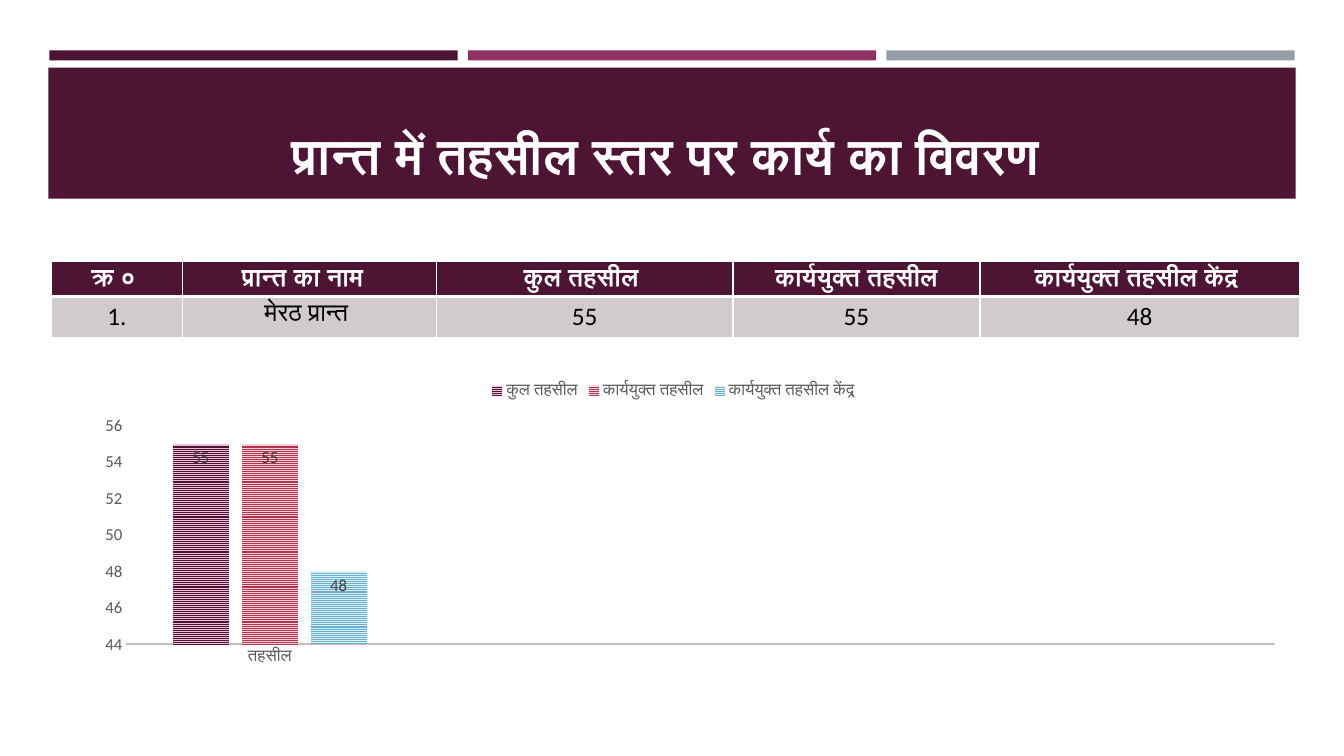
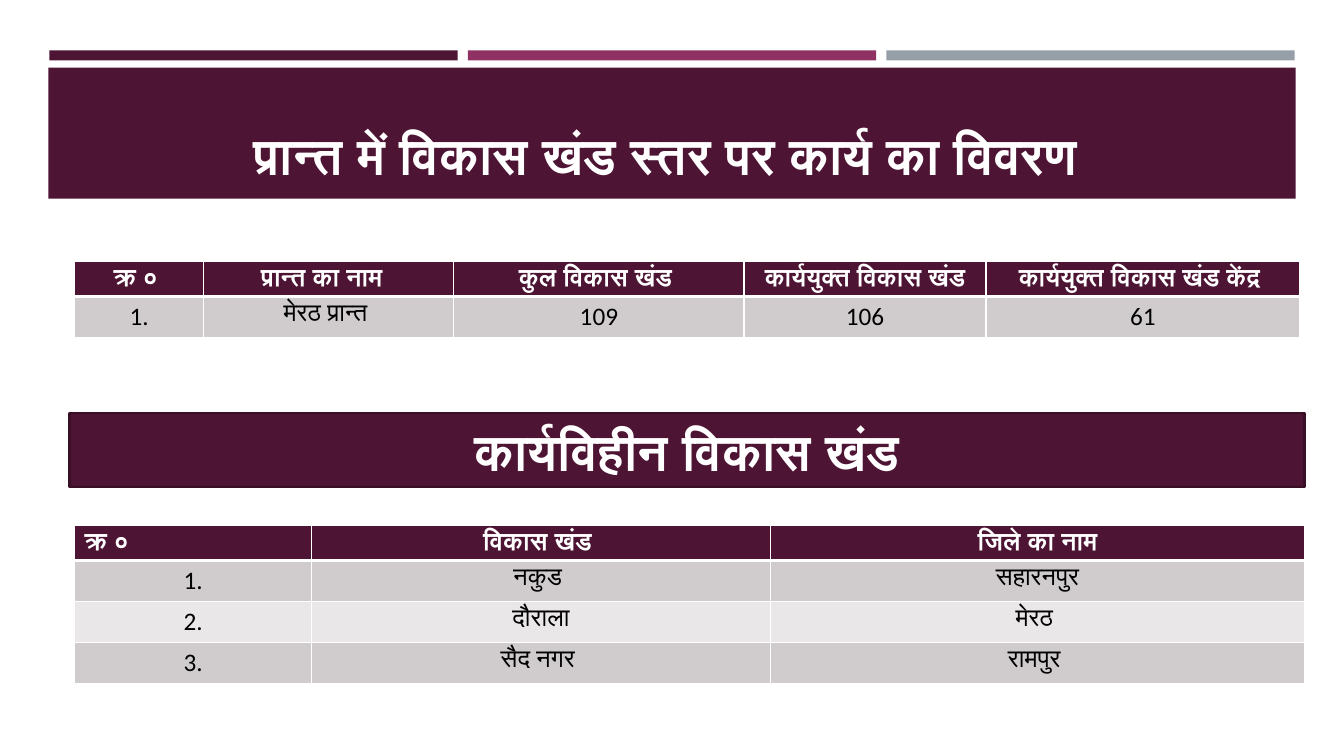
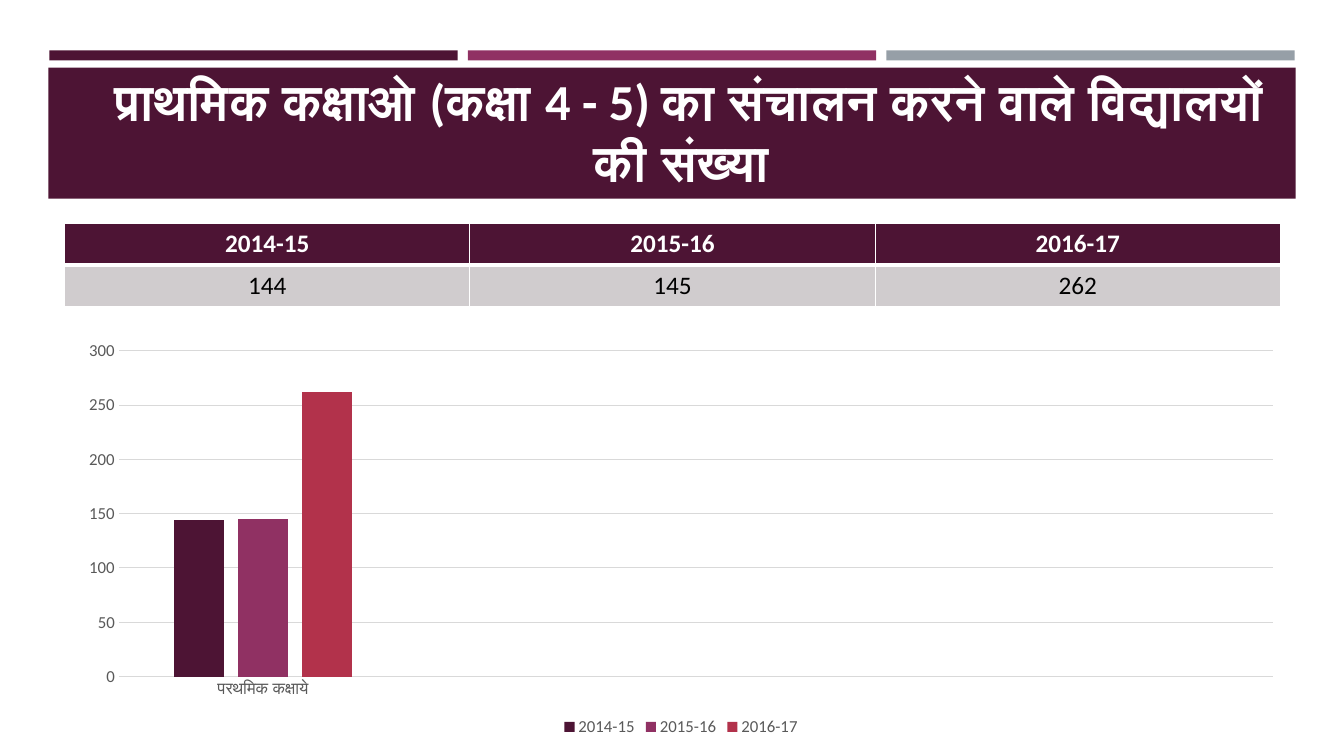
import pptx
import pptx.chart.data
import pptx.dml.color
import pptx.enum.chart
import pptx.enum.dml
import pptx.enum.shapes
import pptx.enum.text
import pptx.oxml
import pptx.util
from lxml import etree

Inches = pptx.util.Inches
Pt = pptx.util.Pt
Align = pptx.enum.text.PP_ALIGN
Anchor = pptx.enum.text.MSO_ANCHOR
LegendPlace = pptx.enum.chart.XL_LEGEND_POSITION

FONT = "Calibri"
COLORS = {
    "plum": "4D1434", "plum_edge": "390F26", "plum_pale": "EEBDD9",
    "magenta": "903163", "steel": "969FA7",
    "red": "B2324B", "red_pale": "F3D3D9",
    "sky": "66B1CE", "sky_pale": "E0EFF5",
    "row_dark": "D0CCCE", "row_light": "E9E7E8",
    "axis_text": "595959", "label_text": "404040",
    "axis_line": "BFBFBF", "grid": "D9D9D9",
    "white": "FFFFFF", "black": "000000",
}


def rgb(name):
    return pptx.dml.color.RGBColor.from_string(COLORS[name])


def style_font(font, size, color, bold=False):
    font.name = FONT
    font.size = Pt(size)
    font.bold = bold
    font.color.rgb = rgb(color)


def write(frame, text, size, color, bold=False, align=Align.CENTER):
    para = frame.paragraphs[0]
    para.alignment = align
    span = para.add_run()
    span.text = text
    style_font(span.font, size, color, bold)


def add_band(page, box, color, edge=None):
    band = page.shapes.add_shape(
        pptx.enum.shapes.MSO_SHAPE.RECTANGLE, *map(Inches, box))
    band.shadow.inherit = False
    band.fill.solid()
    band.fill.fore_color.rgb = rgb(color)
    if edge:
        band.line.color.rgb = rgb(edge)
        band.line.width = Pt(1.75)
    else:
        band.line.fill.background()
    return band


def dress_layout(deck, layout):
    """Put the bands and the title place on the layout all pages share."""
    page = deck.slides.add_slide(layout)
    bands = [add_band(page, (0.49 + index * 4.15, 0.5, 4.05, 0.1), color)
             for index, color in enumerate(("plum", "magenta", "steel"))]
    bands.append(add_band(page, (0.48, 0.67, 12.37, 1.3), "plum"))
    for index, band in enumerate(bands):
        layout.shapes.element.insert(2 + index, band.element)
    place(layout.placeholders[0], (0.64, 0.77, 12.06, 1.11))
    return page


def place(shape, box):
    shape.left, shape.top, shape.width, shape.height = map(Inches, box)


def set_title(page, text, box=None):
    title = page.shapes.title
    if box:
        place(title, box)
    frame = title.text_frame
    frame.word_wrap = True
    frame.auto_size = pptx.enum.text.MSO_AUTO_SIZE.NONE
    frame.vertical_anchor = Anchor.BOTTOM
    write(frame, text, 36, "white", True)


def add_borders(cell, top, bottom):
    props = cell._tc.get_or_add_tcPr()
    sides = (("L", 1), ("R", 1), ("T", top), ("B", bottom))
    for index, (side, width) in enumerate(sides):
        props.insert(index, pptx.oxml.parse_xml(
            '<a:ln%s xmlns:a="http://schemas.openxmlformats.org/drawingml/2006/main"'
            ' w="%d"><a:solidFill><a:srgbClr val="%s"/></a:solidFill></a:ln%s>'
            % (side, Pt(width), COLORS["white"], side)))


def add_grid(page, left, top, widths, heights, rows, first_align=Align.CENTER):
    """Table with a plum heading row over banded rows."""
    table = page.shapes.add_table(
        len(rows), len(widths), Inches(left), Inches(top),
        Inches(sum(widths)), Inches(sum(heights))).table
    for column, width in zip(table.columns, widths):
        column.width = Inches(width)
    for number, (values, height) in enumerate(zip(rows, heights)):
        table.rows[number].height = Inches(height)
        heading = number == 0
        shade = "plum" if heading else ("row_light", "row_dark")[number % 2]
        for index, value in enumerate(values):
            cell = table.cell(number, index)
            cell.fill.solid()
            cell.fill.fore_color.rgb = rgb(shade)
            add_borders(cell, 3 if number == 1 else 1, 3 if heading else 1)
            align = first_align if heading and index == 0 else Align.CENTER
            write(cell.text_frame, value, 18,
                  "white" if heading else "black", heading, align)


def add_columns(page, box, category, series, legend, gap, overlap, axis_line):
    """Column chart whose first of four categories holds the values."""
    data = pptx.chart.data.CategoryChartData()
    data.categories = [category, "", "", ""]
    for name, value in series:
        data.add_series(name, [value, None, None, None])
    chart = page.shapes.add_chart(
        pptx.enum.chart.XL_CHART_TYPE.COLUMN_CLUSTERED,
        *map(Inches, box), data).chart
    style_font(chart.font, 12, "axis_text")
    chart.has_title = False
    chart.has_legend = True
    chart.legend.position = legend
    chart.legend.include_in_layout = False
    style_font(chart.legend.font, 12, "axis_text")
    plot = chart.plots[0]
    plot.vary_by_categories = False
    plot.gap_width = gap
    plot.overlap = overlap
    for axis in (chart.category_axis, chart.value_axis):
        axis.major_tick_mark = pptx.enum.chart.XL_TICK_MARK.NONE
        axis.minor_tick_mark = pptx.enum.chart.XL_TICK_MARK.NONE
        style_font(axis.tick_labels.font, 12, "axis_text")
    color, width = axis_line
    chart.category_axis.format.line.color.rgb = rgb(color)
    chart.category_axis.format.line.width = Pt(width)
    chart.value_axis.format.line.fill.background()
    return chart


def scale_values(axis, low, high, step, grid):
    axis.minimum_scale, axis.maximum_scale, axis.major_unit = low, high, step
    axis.has_major_gridlines = grid
    if grid:
        axis.major_gridlines.format.line.color.rgb = rgb("grid")
        axis.major_gridlines.format.line.width = Pt(0.75)


def set_plot_area(chart, x, y, w, h):
    area = chart.element.chart.plotArea
    for old in area.findall(pptx.oxml.ns.qn("c:layout")):
        area.remove(old)
    layout = etree.Element(pptx.oxml.ns.qn("c:layout"))
    manual = etree.SubElement(layout, pptx.oxml.ns.qn("c:manualLayout"))
    settings = (("layoutTarget", "inner"), ("xMode", "edge"), ("yMode", "edge"),
                ("x", x), ("y", y), ("w", w), ("h", h))
    for name, value in settings:
        etree.SubElement(manual, pptx.oxml.ns.qn("c:" + name), val=str(value))
    area.insert(0, layout)


def hatch_series(series, color):
    fill = series.format.fill
    fill.patterned()
    fill.pattern = pptx.enum.dml.MSO_PATTERN.NARROW_HORIZONTAL
    fill.fore_color.rgb = rgb(color)
    fill.back_color.rgb = rgb(color + "_pale")
    labels = series.data_labels
    labels.show_value = True
    labels.position = pptx.enum.chart.XL_LABEL_POSITION.INSIDE_END
    style_font(labels.font, 12, "label_text")


def build_tehsil_page(page):
    set_title(page, "प्रान्त में तहसील स्तर पर कार्य का विवरण ")
    add_grid(page, 0.51, 2.59, (1.3, 2.52, 2.94, 2.45, 3.17), (0.3, 0.19), (
        ("क्र ० ", "प्रान्त का नाम  ", "कुल तहसील ", "कार्ययुक्त तहसील",
         "कार्ययुक्त तहसील केंद्र "),
        ("1.", "मेरठ प्रान्त ", "55", "55", "48")))
    chart = add_columns(
        page, (0.51, 3.68, 12.38, 3.39), "तहसील",
        (("कुल तहसील", 55), ("कार्ययुक्त तहसील", 55),
         ("कार्ययुक्त तहसील केंद्र ", 48)),
        LegendPlace.TOP, 164, -22, ("axis_line", 1.5))
    scale_values(chart.value_axis, 44, 56, 2, False)
    set_plot_area(chart, 0.06, 0.16, 0.92, 0.64)
    for series, color in zip(chart.series, ("plum", "red", "sky")):
        hatch_series(series, color)


def build_block_page(page):
    set_title(page, "प्रान्त में विकास खंड स्तर पर कार्य का विवरण ")
    add_grid(page, 0.74, 2.59, (1.28, 2.48, 2.88, 2.4, 3.11), (0.3, 0.19), (
        ("क्र ० ", "प्रान्त का नाम  ", "कुल विकास खंड ", "कार्ययुक्त विकास खंड",
         "कार्ययुक्त विकास खंड केंद्र "),
        ("1.", "मेरठ प्रान्त ", "109", "106", "61")))
    banner = add_band(page, (0.69, 4.1, 12.25, 0.73), "plum", "plum_edge")
    banner.text_frame.vertical_anchor = Anchor.MIDDLE
    write(banner.text_frame, "कार्यविहीन विकास खंड", 36, "white", True)
    add_grid(page, 0.74, 5.21, (2.35, 4.55, 5.3), (0.3, 0.19, 0.19, 0.19), (
        ("क्र ०", "विकास खंड ", "जिले का नाम"),
        ("1.", "नकुड ", "सहारनपुर"),
        ("2.", "दौराला", "मेरठ "),
        ("3.", "सैद नगर ", "रामपुर ")), Align.LEFT)


def build_school_page(page):
    years = ("2014-15", "2015-16", "2016-17")
    counts = (144, 145, 262)
    set_title(page, "प्राथमिक कक्षाओ (कक्षा 4 - 5) का संचालन करने वाले "
              "विद्यालयों की संख्या ", (0.8, 0.84, 12.06, 1.11))
    add_grid(page, 0.64, 2.22, (4.02,) * 3, (0.41,) * 2,
             (years, [str(count) for count in counts]))
    chart = add_columns(
        page, (0.64, 3.3, 12.23, 4.05), "परथमिक कक्षाये", zip(years, counts),
        LegendPlace.BOTTOM, 219, -27, ("grid", 0.75))
    scale_values(chart.value_axis, 0, 300, 50, True)
    for series, color in zip(chart.series, ("plum", "magenta", "red")):
        series.format.fill.solid()
        series.format.fill.fore_color.rgb = rgb(color)


def main():
    deck = pptx.Presentation()
    deck.slide_width, deck.slide_height = Inches(13.33), Inches(7.5)
    layout = deck.slide_layouts.get_by_name("Title Only")
    build_tehsil_page(dress_layout(deck, layout))
    for build in (build_block_page, build_school_page):
        build(deck.slides.add_slide(layout))
    deck.save("out.pptx")


if __name__ == "__main__":
    main()
